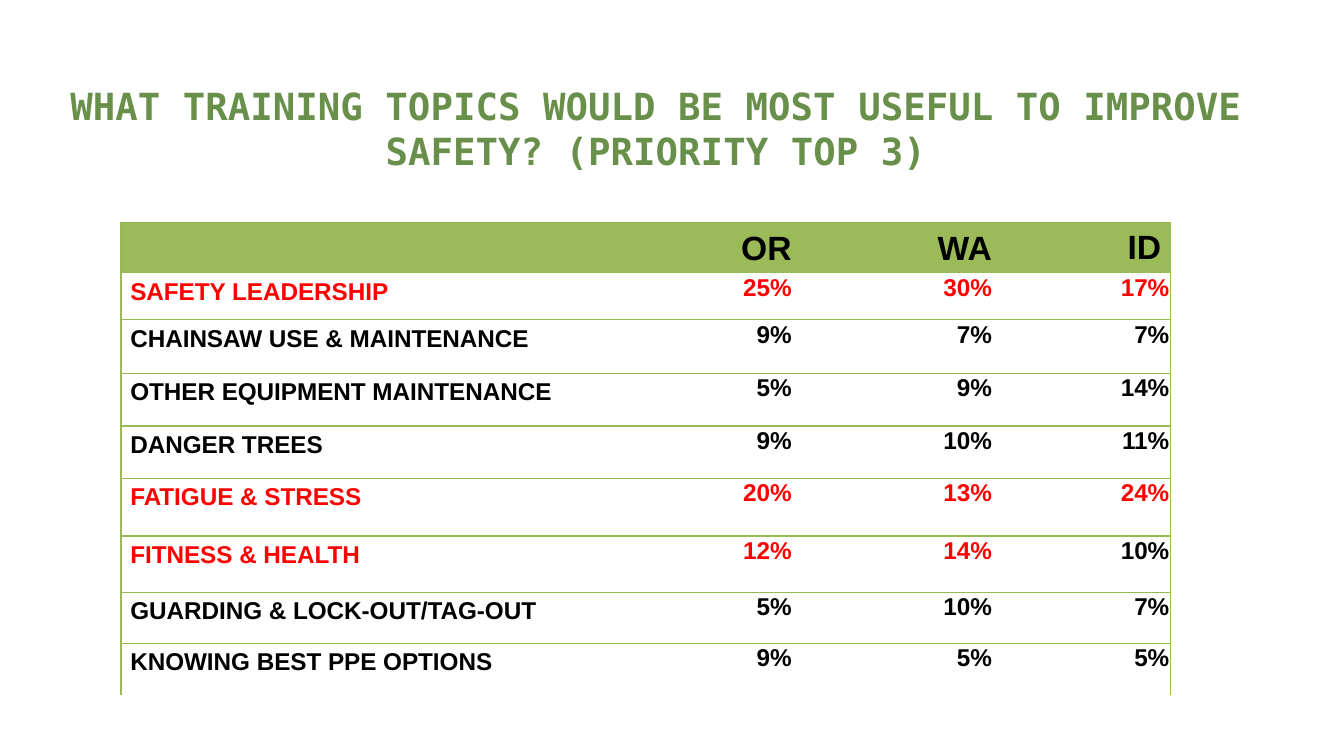
from lxml import etree
from pptx import Presentation
from pptx.dml.color import RGBColor
from pptx.enum.text import MSO_ANCHOR, MSO_AUTO_SIZE, PP_ALIGN
from pptx.oxml.ns import qn
from pptx.util import Inches, Pt

LEFT, CENTER, RIGHT = PP_ALIGN.LEFT, PP_ALIGN.CENTER, PP_ALIGN.RIGHT
TOP, MIDDLE = MSO_ANCHOR.TOP, MSO_ANCHOR.MIDDLE

TITLE_GREEN = RGBColor(0x69, 0x90, 0x4A)
HEADER_GREEN = RGBColor(0x9B, 0xBB, 0x59)
BORDER_GREEN = RGBColor(0x98, 0xB9, 0x55)
RED = RGBColor(0xFF, 0x00, 0x00)
BLACK = RGBColor(0x00, 0x00, 0x00)

PLAIN_TABLE_STYLE = "{2D5ABB26-0587-4C30-8999-92F81FD0307C}"
WIDE_INSETS = (0.07, 0.04, 0.07, 0.04)
TIGHT_INSETS = (0.01, 0.01, 0.01, 0)

SLIDE_WIDTH = 10
SLIDE_HEIGHT = SLIDE_WIDTH * 9 / 16

STATES = ["", "OR", "WA", "ID"]
# Topic, percentages by state, and how many leading cells are red
TOPICS = [
    ("SAFETY LEADERSHIP", (25, 30, 17), 4),
    ("CHAINSAW USE & MAINTENANCE", (9, 7, 7), 0),
    ("OTHER EQUIPMENT MAINTENANCE", (5, 9, 14), 0),
    ("DANGER TREES", (9, 10, 11), 0),
    ("FATIGUE & STRESS", (20, 13, 24), 4),
    ("FITNESS & HEALTH", (12, 14, 10), 3),
    ("GUARDING & LOCK-OUT/TAG-OUT", (5, 10, 7), 0),
    ("KNOWING BEST PPE OPTIONS", (9, 5, 5), 0),
]
COLUMN_WIDTHS = [3.82, 1.18, 1.49, 1.32]
ROW_HEIGHTS = [0.37, 0.35, 0.4, 0.39, 0.39, 0.43, 0.42, 0.38, 0.38, 0.29]


def write_text(frame, text, font="Arial", size=13, color=BLACK, align=LEFT):
    para = frame.paragraphs[0]
    para.alignment = align
    span = para.add_run()
    span.text = text
    span.font.name = font
    span.font.size = Pt(size)
    span.font.bold = True
    span.font.color.rgb = color


class SlideBuilder:
    def __init__(self, page):
        self.page = page

    def title(self, text, left, top, width, height):
        box = self.page.shapes.title
        box.left, box.top = Inches(left), Inches(top)
        box.width, box.height = Inches(width), Inches(height)
        frame = box.text_frame
        frame.word_wrap = True
        frame.auto_size = MSO_AUTO_SIZE.NONE
        frame.vertical_anchor = MIDDLE
        write_text(frame, text, font="DejaVu Sans Mono", size=20,
                   color=TITLE_GREEN, align=CENTER)

    def table(self, left, top, widths, heights):
        frame = self.page.shapes.add_table(
            len(heights), len(widths), Inches(left), Inches(top),
            Inches(sum(widths)), Inches(sum(heights)))
        grid = frame.table
        grid._tbl.tblPr.find(qn("a:tableStyleId")).text = PLAIN_TABLE_STYLE
        for column, width in zip(grid.columns, widths):
            column.width = Inches(width)
        for row, height in zip(grid.rows, heights):
            row.height = Inches(height)
        return grid

    def cell(self, cell, text, sides, insets=TIGHT_INSETS, anchor=TOP,
             fill=None, **style):
        cell.margin_left, cell.margin_top, cell.margin_right, cell.margin_bottom = (
            Inches(inset) for inset in insets)
        cell.vertical_anchor = anchor
        self.borders(cell, sides)
        if fill is None:
            cell.fill.background()
        else:
            cell.fill.solid()
            cell.fill.fore_color.rgb = fill
        if text:
            write_text(cell.text_frame, text, **style)
        else:
            cell.text_frame.paragraphs[0].font.size = Pt(10)

    def borders(self, cell, sides):
        properties = cell._tc.get_or_add_tcPr()
        for side in "LRTB":
            if side in sides:
                line = etree.SubElement(properties, qn(f"a:ln{side}"), w=str(Pt(0.75)))
                paint = etree.SubElement(line, qn("a:solidFill"))
                etree.SubElement(paint, qn("a:srgbClr"), val=str(BORDER_GREEN))


def main():
    deck = Presentation()
    deck.slide_width, deck.slide_height = Inches(SLIDE_WIDTH), Inches(SLIDE_HEIGHT)
    builder = SlideBuilder(deck.slides.add_slide(deck.slide_layouts[5]))

    builder.title("WHAT TRAINING TOPICS WOULD BE MOST USEFUL TO IMPROVE "
                  "SAFETY? (PRIORITY TOP 3)", 0.35, 0.32, 9.06, 1.26)

    grid = builder.table(0.9, 1.66, COLUMN_WIDTHS, ROW_HEIGHTS)
    outer_sides = ["L", "", "", "R"]

    # Header row
    for column, state in enumerate(STATES):
        builder.cell(grid.cell(0, column), state, outer_sides[column] + "T",
                     insets=WIDE_INSETS if state == "ID" else TIGHT_INSETS,
                     anchor=MIDDLE, fill=HEADER_GREEN, size=18, align=RIGHT)

    # Topic rows: every other row is ruled above and below
    for row, (topic, shares, red_cells) in enumerate(TOPICS, start=1):
        rules = "TB" if row % 2 else ""
        texts = [topic] + [f"{share}%" for share in shares]
        for column, text in enumerate(texts):
            builder.cell(grid.cell(row, column), text, outer_sides[column] + rules,
                         insets=TIGHT_INSETS if column else WIDE_INSETS,
                         color=RED if column < red_cells else BLACK,
                         align=RIGHT if column else LEFT)

    # Empty closing row across the table
    last = len(ROW_HEIGHTS) - 1
    grid.cell(last, 0).merge(grid.cell(last, len(STATES) - 1))
    builder.cell(grid.cell(last, 0), "", "")

    deck.save("out.pptx")


if __name__ == "__main__":
    main()
